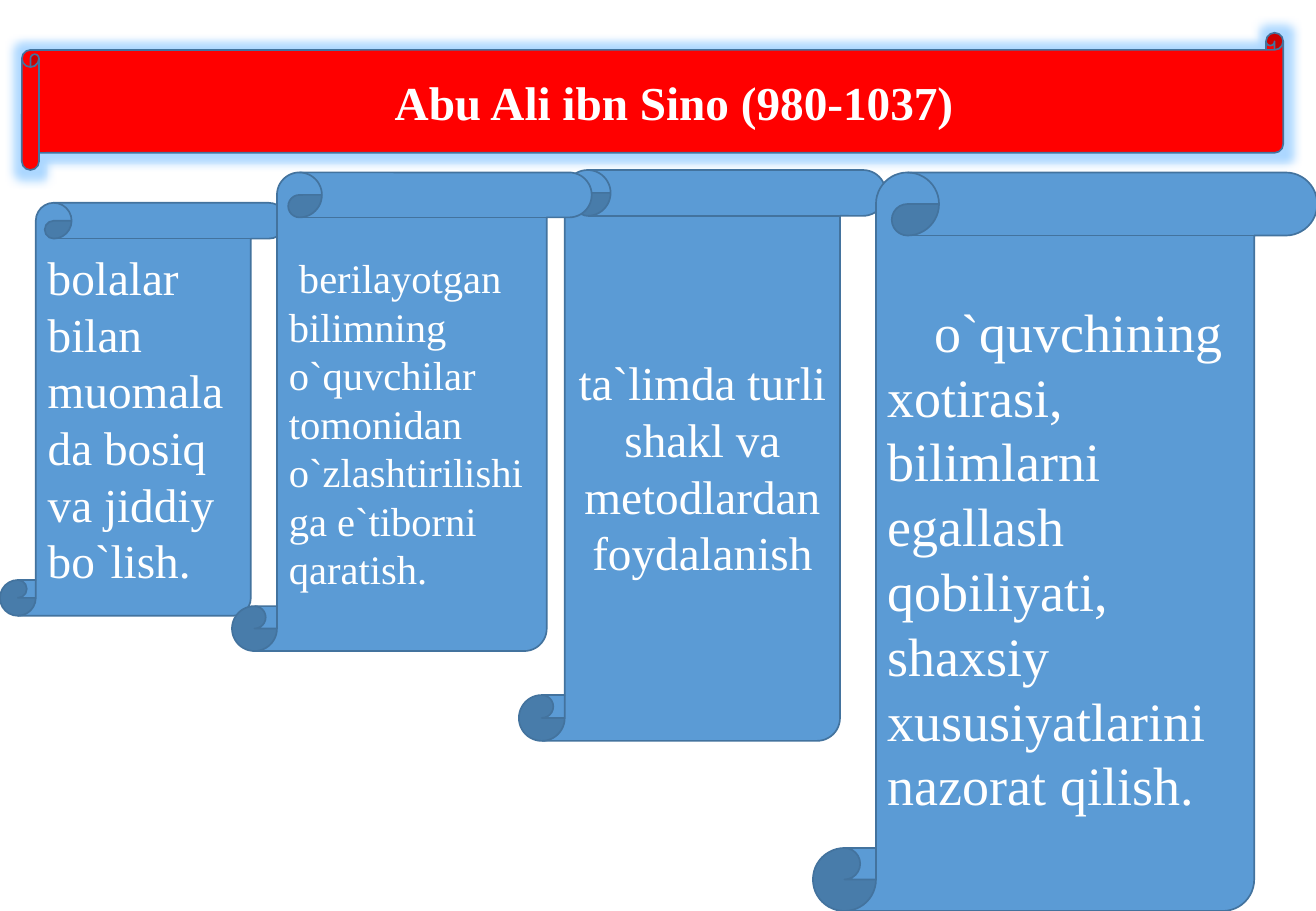
from dataclasses import dataclass
from lxml.etree import SubElement
from pptx import Presentation
from pptx.dml.color import RGBColor as RGB
from pptx.enum.shapes import MSO_SHAPE as Kind
from pptx.enum.text import MSO_ANCHOR as Anchor, MSO_AUTO_SIZE as Fit, PP_ALIGN as Align
from pptx.oxml.ns import qn
from pptx.shapes.autoshape import Shape
from pptx.slide import Slide
from pptx.util import Inches, Pt


@dataclass(frozen=True)
class Theme:
    font: str = "Times New Roman"
    text: RGB = RGB(0xFF, 0xFF, 0xFF)
    head: RGB = RGB(0xFF, 0x00, 0x00)
    blue: RGB = RGB(0x5B, 0x9B, 0xD5)
    edge: RGB = RGB(0x43, 0x73, 0x9E)
    small: int = 24
    mid: int = 28
    large: int = 32


@dataclass(frozen=True)
class Box:
    left: float
    top: float
    width: float
    height: float

    def place(self) -> tuple[Inches, Inches, Inches, Inches]:
        return Inches(self.left), Inches(self.top), Inches(self.width), Inches(self.height)


@dataclass(frozen=True)
class Scroll:
    box: Box
    text: str
    size: int
    align: Align = Align.LEFT
    indent: float = 0


THEME = Theme()
BANNER = Box(0.18, 0.27, 10.38, 1.13)
TITLE = Box(0.32, 0.41, 10.17, 0.85)
INDENT = 0.38

# Listed from back to front
SCROLLS = [
    Scroll(Box(0, 1.67, 2.36, 3.4),
           "bolalar bilan muomalada bosiq va jiddiy bo`lish.", THEME.mid),
    Scroll(Box(4.27, 1.4, 3.02, 4.7),
           "ta`limda turli shakl va metodlardan foydalanish", THEME.mid, Align.CENTER),
    Scroll(Box(1.91, 1.42, 2.96, 3.94),
           " berilayotgan bilimning o`quvchilar tomonidan "
           "o`zlashtirilishiga e`tiborni qaratish.", THEME.small),
    Scroll(Box(6.69, 1.42, 4.15, 6.08),
           "o`quvchining xotirasi, bilimlarni egallash qobiliyati, "
           "shaxsiy xususiyatlarini nazorat qilish.", THEME.large, indent=INDENT),
]


def write(shape: Shape, text: str, size: int, align: Align,
          indent: float = 0, bold: bool = False) -> None:
    frame = shape.text_frame
    frame.text = text
    frame.word_wrap = True
    frame.auto_size = Fit.NONE
    frame.vertical_anchor = Anchor.MIDDLE
    para = frame.paragraphs[0]
    para.alignment = align
    para.line_spacing = 1.0
    para.space_before = Pt(0)
    para._p.get_or_add_pPr().set("indent", str(Inches(indent)))
    font = para.runs[0].font
    font.name, font.size, font.bold = THEME.font, Pt(size), bold
    font.color.rgb = THEME.text


def draw(slide: Slide, kind: Kind, box: Box, fill: RGB) -> Shape:
    shape = slide.shapes.add_shape(kind, *box.place())
    shape.shadow.inherit = False
    shape.fill.solid()
    shape.fill.fore_color.rgb = fill
    shape.line.color.rgb = THEME.edge
    shape.line.width = Pt(1)
    return shape


def glow(shape: Shape, color: RGB, radius: float) -> None:
    effects = shape._element.spPr.find(qn("a:effectLst"))
    halo = SubElement(effects, qn("a:glow"), rad=str(Pt(radius)))
    tint = SubElement(halo, qn("a:srgbClr"), val=str(color))
    SubElement(tint, qn("a:satMod"), val="175000")
    SubElement(tint, qn("a:alpha"), val="40000")


def add_title(slide: Slide) -> None:
    """Lay the title placeholder over a glowing banner."""
    banner = draw(slide, Kind.HORIZONTAL_SCROLL, BANNER, THEME.head)
    glow(banner, THEME.blue, 11)
    title = slide.shapes.title
    title.left, title.top, title.width, title.height = TITLE.place()
    write(title, "Abu Ali ibn Sino (980-1037) ", THEME.mid, Align.CENTER, INDENT, True)
    banner._element.addnext(title._element)


def main() -> None:
    deck = Presentation()
    deck.slide_width, deck.slide_height = Inches(10.83), Inches(7.5)
    slide = deck.slides.add_slide(deck.slide_layouts.get_by_name("Title Only"))
    add_title(slide)
    for item in SCROLLS:
        shape = draw(slide, Kind.VERTICAL_SCROLL, item.box, THEME.blue)
        write(shape, item.text, item.size, item.align, item.indent)
    deck.save("out.pptx")


if __name__ == "__main__":
    main()
